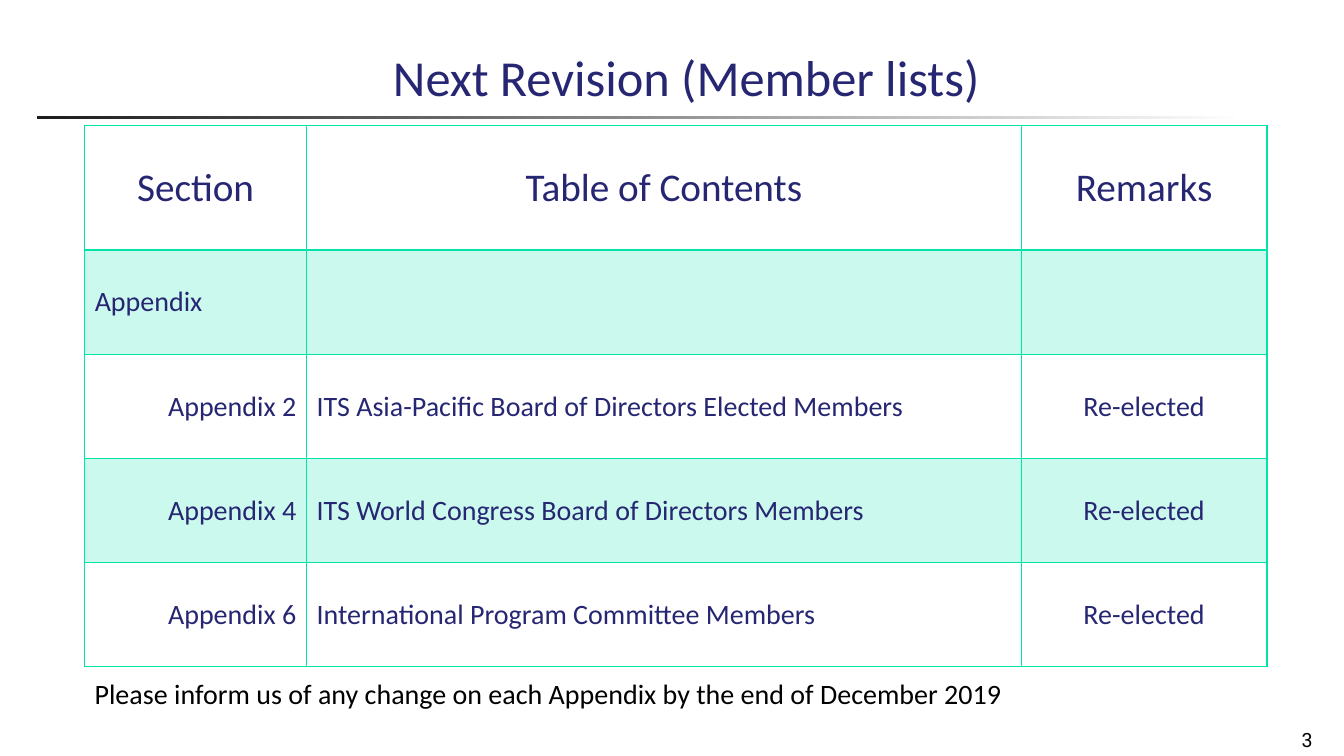
from dataclasses import dataclass

from lxml.etree import SubElement
from pptx import Presentation
from pptx.dml.color import RGBColor
from pptx.enum.shapes import MSO_SHAPE
from pptx.enum.text import MSO_ANCHOR, MSO_AUTO_SIZE, PP_ALIGN
from pptx.oxml.ns import qn
from pptx.util import Pt


@dataclass(frozen=True)
class Theme:
    """Colours, fonts and type sizes of the slide."""

    navy: str = "262673"
    black: str = "000000"
    rule_dark: str = "1C1C1C"
    white: str = "FFFFFF"
    green: str = "00E4A8"
    band_alpha: int = 20
    body_font: str = "Calibri"
    number_font: str = "Roboto"
    title_size: int = 36
    header_size: int = 28
    body_size: int = 20
    number_size: int = 14


THEME = Theme()
LEFT, CENTER, RIGHT = PP_ALIGN.LEFT, PP_ALIGN.CENTER, PP_ALIGN.RIGHT
HEADINGS = ("Section", "Table of Contents", "Remarks")
MEMBER_LISTS = (
    ("Appendix 2", "ITS Asia-Pacific Board of Directors Elected Members"),
    ("Appendix 4", "ITS World Congress Board of Directors Members"),
    ("Appendix 6", "International Program Committee Members"),
)


def apply_format(target, values):
    """Set each named attribute of the target."""
    for name, value in values.items():
        setattr(target, name, value)


def place(shape, box):
    """Move and size a shape to a box in points."""
    names = ("left", "top", "width", "height")
    apply_format(shape, {name: Pt(length) for name, length in zip(names, box)})


def write(text_frame, text, size, color, alignment, font_name=THEME.body_font):
    """Write one formatted paragraph."""
    paragraph = text_frame.paragraphs[0]
    paragraph.alignment = alignment
    run = paragraph.add_run()
    run.text = text
    apply_format(run.font, {"size": Pt(size), "name": font_name, "bold": False})
    run.font.color.rgb = RGBColor.from_string(color)


def add_title(slide, box):
    """Place and fill the title placeholder."""
    title = slide.shapes.title
    place(title, box)
    apply_format(title.text_frame, {
        "word_wrap": True,
        "auto_size": MSO_AUTO_SIZE.NONE,
        "vertical_anchor": MSO_ANCHOR.MIDDLE,
    })
    write(title.text_frame, "Next Revision (Member lists)",
          THEME.title_size, THEME.navy, CENTER)


def add_title_rule(slide, box):
    """Draw the fading rule under the title."""
    rule = slide.shapes.add_shape(MSO_SHAPE.RECTANGLE, *map(Pt, box))
    rule.shadow.inherit = False
    rule.line.fill.background()
    rule.fill.gradient()
    rule.fill.gradient_angle = 0
    for stop, color in zip(rule.fill.gradient_stops, (THEME.rule_dark, THEME.white)):
        stop.color.rgb = RGBColor.from_string(color)


def set_borders(cell, widths):
    """Draw the four cell borders with the given widths in points."""
    properties = cell._tc.get_or_add_tcPr()
    for side, width in widths.items():
        line = SubElement(properties, qn(f"a:ln{side}"), w=str(Pt(width)))
        fill = SubElement(line, qn("a:solidFill"))
        SubElement(fill, qn("a:srgbClr"), val=THEME.green)


def fill_cell(cell, banded):
    """Give a banded cell a translucent fill and leave others clear."""
    if not banded:
        cell.fill.background()
        return
    cell.fill.solid()
    cell.fill.fore_color.rgb = RGBColor.from_string(THEME.green)
    color = cell._tc.tcPr.find(qn("a:solidFill"))[0]
    SubElement(color, qn("a:alpha"), val=str(THEME.band_alpha * 1000))


def add_member_table(slide, box, header_height=88.9):
    """Build the table of member lists inside the box."""
    left, top, width, height = box
    rows = [HEADINGS, ("Appendix", "", "")]
    rows += [(*entry, "Re-elected") for entry in MEMBER_LISTS]
    alignments = [(CENTER,) * 3, (LEFT,) * 3] + [(RIGHT, LEFT, CENTER)] * len(MEMBER_LISTS)
    table = slide.shapes.add_table(len(rows), 3, *map(Pt, box)).table
    apply_format(table, {"first_row": False, "horz_banding": False})
    column_widths = (158.4, 510.5, width - 158.4 - 510.5)
    for column, column_width in zip(table.columns, column_widths):
        column.width = Pt(column_width)
    body_height = (height - header_height) / (len(rows) - 1)
    for index, texts in enumerate(rows):
        table.rows[index].height = Pt(body_height if index else header_height)
        size = THEME.body_size if index else THEME.header_size
        widths = {"L": 1, "R": 1, "T": 2 if index == 1 else 1, "B": 1 if index else 2}
        for cell, text, alignment in zip(table.rows[index].cells, texts, alignments[index]):
            cell.vertical_anchor = MSO_ANCHOR.MIDDLE
            set_borders(cell, widths)
            fill_cell(cell, index % 2 == 1)
            if text:
                write(cell.text_frame, text, size, THEME.navy, alignment)


def add_text(slide, box, text, size, alignment, anchor, font_name):
    """Add a black one-line text box."""
    text_frame = slide.shapes.add_textbox(*map(Pt, box)).text_frame
    apply_format(text_frame, {"word_wrap": True, "vertical_anchor": anchor})
    write(text_frame, text, size, THEME.black, alignment, font_name)


def add_footer(slide, box):
    """Add the request below the table and the slide number."""
    left, top, width, height = box
    add_text(slide, (left, top, 668.9, 31.7),
             "Please inform us of any change on each Appendix by the end of December 2019",
             THEME.body_size, LEFT, MSO_ANCHOR.TOP, THEME.body_font)
    add_text(slide, (left + width - 200, top + height - 36, 200, 36), "3",
             THEME.number_size, RIGHT, MSO_ANCHOR.BOTTOM, THEME.number_font)


def main():
    """Build and save the slide."""
    presentation = Presentation()
    apply_format(presentation, {"slide_width": Pt(960), "slide_height": Pt(540)})
    slide = presentation.slides.add_slide(presentation.slide_layouts[5])
    add_title_rule(slide, (26.6, 82.8, 864, 2.2))
    add_title(slide, (263.5, 28.8, 453.6, 51.1))
    add_member_table(slide, (60.5, 89.8, 844.6, 386.6))
    add_footer(slide, (60.5, 479.5, 884.2, 60.5))
    presentation.save("out.pptx")


if __name__ == "__main__":
    main()
